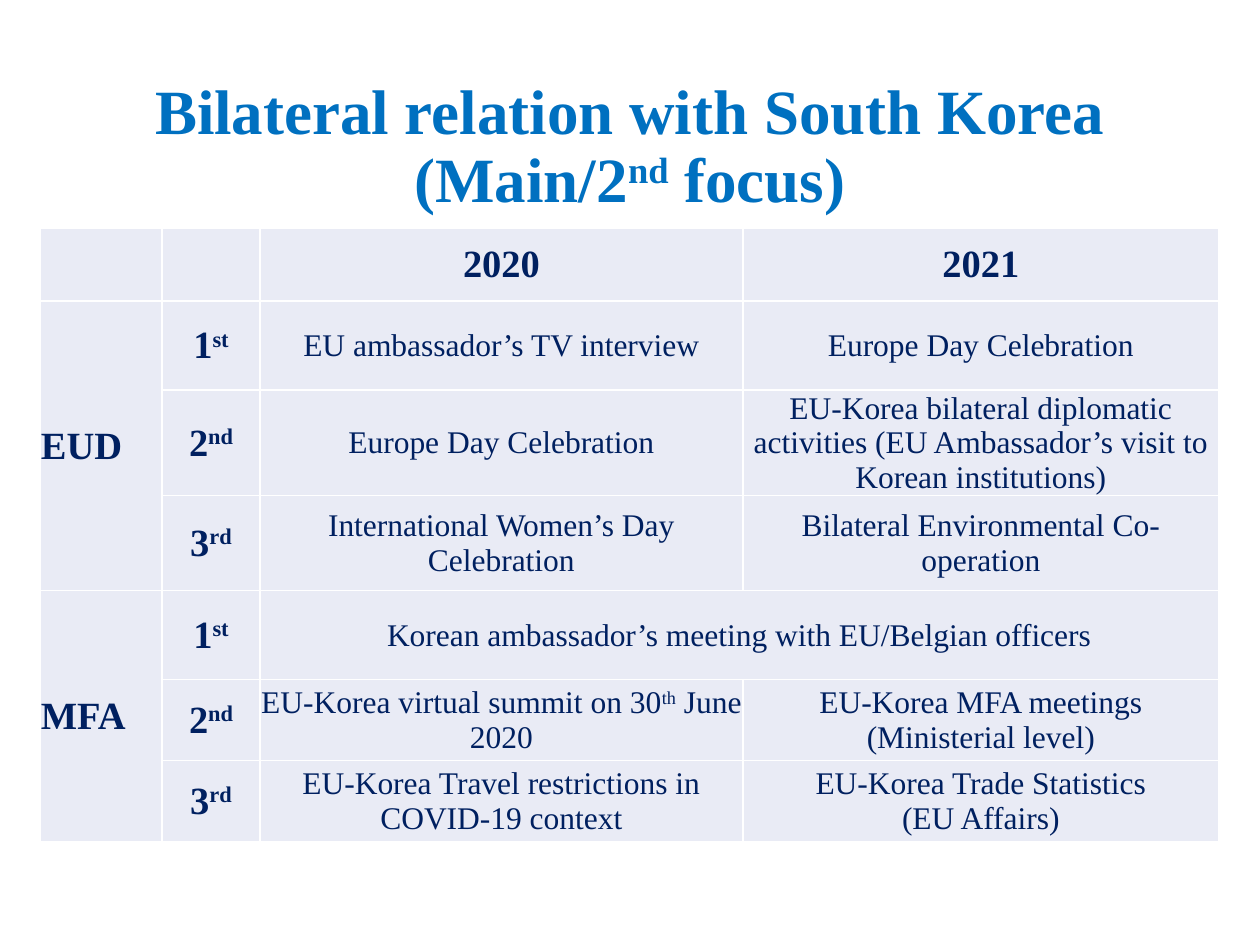
from lxml.etree import SubElement
from pptx import Presentation
from pptx.dml.color import RGBColor
from pptx.enum.text import MSO_ANCHOR, PP_ALIGN
from pptx.oxml.ns import qn
from pptx.util import Pt

PX = 914400 // 126
FONT = "Times New Roman"
COLORS = {"title": "0070C0", "text": "002060", "cell": "E9EBF5", "border": "FFFFFF"}

COLUMN_WIDTHS = [122, 98, 483, 476]
ROW_HEIGHTS = [73, 89, 94, 95, 89, 81, 81]
RANKS = ["1^st", "2^nd", "3^rd"]
YEARS = ["2020", "2021"]
# Each event row holds one text per year, or a single text that spans both.
FOCUS = {
    "EUD": [
        ["EU ambassador’s TV interview", "Europe Day Celebration"],
        ["Europe Day Celebration",
         "EU-Korea bilateral diplomatic activities "
         "(EU Ambassador’s visit to Korean institutions)"],
        ["International Women’s Day Celebration", "Bilateral Environmental Co-operation"],
    ],
    "MFA": [
        ["Korean ambassador’s meeting with EU/Belgian officers"],
        ["EU-Korea virtual summit on 30^th^ June 2020",
         "EU-Korea MFA meetings (Ministerial level)"],
        ["EU-Korea Travel restrictions in COVID-19 context",
         "EU-Korea Trade Statistics\n(EU Affairs)"],
    ],
}


def px(length):
    return length * PX


def write_paragraph(paragraph, text, size, color, bold, align):
    """Write text in which carets enclose superscripts."""
    paragraph.alignment = align
    font = paragraph.font
    font.name, font.size, font.bold = FONT, Pt(size), bold
    font.color.rgb = RGBColor.from_string(COLORS[color])
    for index, part in enumerate(text.split("^")):
        for line_index, line in enumerate(part.split("\n")):
            if line_index:
                paragraph.add_line_break()
            run = paragraph.add_run()
            run.text = line
            if index % 2:
                run.font._element.set("baseline", "30000")


def add_title(slide, left, top, width, height):
    title = slide.shapes.title
    title.left, title.top, title.width, title.height = map(px, (left, top, width, height))
    frame = title.text_frame
    frame.vertical_anchor = MSO_ANCHOR.MIDDLE
    heading = frame.paragraphs[0]
    heading.line_spacing = 0.9
    write_paragraph(heading, "Bilateral relation with South Korea\n(Main/2^nd^ focus)",
                    36, "title", True, PP_ALIGN.CENTER)


def style_cell(cell):
    properties = cell._tc.get_or_add_tcPr()
    for side in ("lnL", "lnR", "lnT", "lnB"):
        line = SubElement(properties, qn(f"a:{side}"), w=str(Pt(1)))
        line_fill = SubElement(line, qn("a:solidFill"))
        SubElement(line_fill, qn("a:srgbClr"), val=COLORS["border"])
    cell.fill.solid()
    cell.fill.fore_color.rgb = RGBColor.from_string(COLORS["cell"])


def write_cell(cell, text, size=22, bold=True, align=PP_ALIGN.CENTER):
    cell.vertical_anchor = MSO_ANCHOR.MIDDLE
    cell.margin_left = cell.margin_right = cell.margin_top = px(1)
    cell.margin_bottom = 0
    frame = cell.text_frame
    for index, line in enumerate(text.split("\n")):
        paragraph = frame.add_paragraph() if index else frame.paragraphs[0]
        write_paragraph(paragraph, line, size, "text", bold, align)


def add_focus_table(slide, left, top):
    table = slide.shapes.add_table(
        len(ROW_HEIGHTS), len(COLUMN_WIDTHS), px(left), px(top),
        px(sum(COLUMN_WIDTHS)), px(sum(ROW_HEIGHTS))).table
    table.first_row = table.horz_banding = False
    for column, width in zip(table.columns, COLUMN_WIDTHS):
        column.width = px(width)
    for row, height in zip(table.rows, ROW_HEIGHTS):
        row.height = px(height)
    for cell in table.iter_cells():
        style_cell(cell)

    for column, year in enumerate(YEARS, start=2):
        write_cell(table.cell(0, column), year)
    for group, (institution, events) in enumerate(FOCUS.items()):
        first_row = 1 + group * len(RANKS)
        institution_cell = table.cell(first_row, 0)
        institution_cell.merge(table.cell(first_row + len(RANKS) - 1, 0))
        write_cell(institution_cell, institution, align=PP_ALIGN.LEFT)
        for row, (rank, yearly_events) in enumerate(zip(RANKS, events), start=first_row):
            write_cell(table.cell(row, 1), rank)
            if len(yearly_events) == 1:
                table.cell(row, 2).merge(table.cell(row, 3))
            for column, event in enumerate(yearly_events, start=2):
                write_cell(table.cell(row, column), event, size=18, bold=False)


def main():
    presentation = Presentation()
    presentation.slide_width, presentation.slide_height = px(1260), px(945)
    slide = presentation.slides.add_slide(presentation.slide_layouts[5])
    add_title(slide, 40, 68, 1180, 160)
    add_focus_table(slide, 40, 228)
    presentation.save("out.pptx")


if __name__ == "__main__":
    main()
